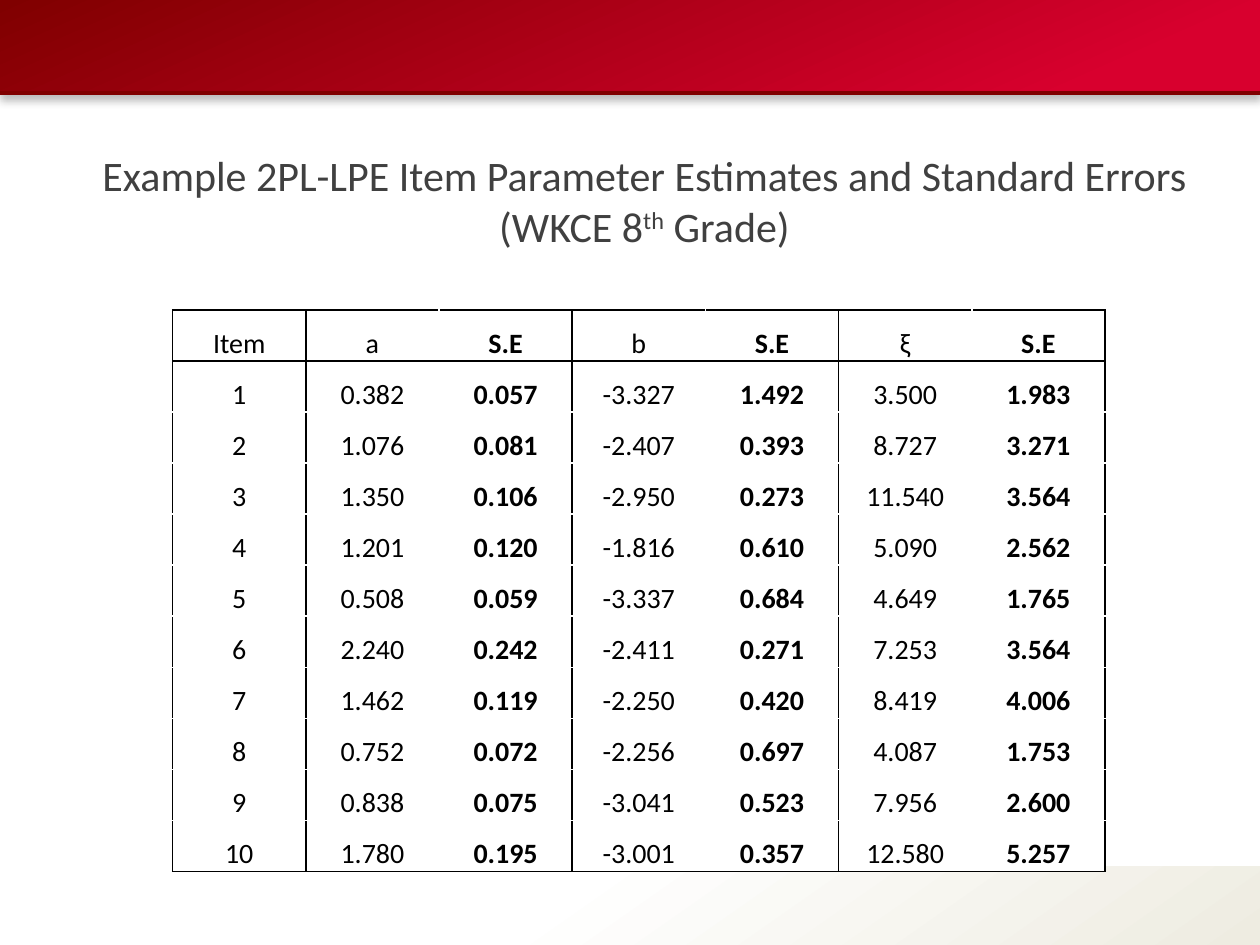
from lxml import etree
from pptx import Presentation
from pptx.dml.color import RGBColor
from pptx.enum.shapes import MSO_CONNECTOR, MSO_SHAPE
from pptx.enum.text import MSO_ANCHOR, MSO_AUTO_SIZE, PP_ALIGN
from pptx.oxml import parse_xml
from pptx.oxml.ns import nsdecls, qn
from pptx.util import Inches, Pt

RECTANGLE = MSO_SHAPE.RECTANGLE
STRAIGHT = MSO_CONNECTOR.STRAIGHT
TOP, BOTTOM = MSO_ANCHOR.TOP, MSO_ANCHOR.BOTTOM
CENTER = PP_ALIGN.CENTER
NO_AUTOFIT = MSO_AUTO_SIZE.NONE
TITLE_ONLY = 5

BLACK, WHITE, GRAY = "000000", "FFFFFF", "404040"
DARK_RED, RED, CREAM = "800000", "D8002E", "EEECE1"

HEADER = ["Item", "a", "S.E", "b", "S.E", "ξ", "S.E"]
ESTIMATES = [
    ["0.382", "0.057", "-3.327", "1.492", "3.500", "1.983"],
    ["1.076", "0.081", "-2.407", "0.393", "8.727", "3.271"],
    ["1.350", "0.106", "-2.950", "0.273", "11.540", "3.564"],
    ["1.201", "0.120", "-1.816", "0.610", "5.090", "2.562"],
    ["0.508", "0.059", "-3.337", "0.684", "4.649", "1.765"],
    ["2.240", "0.242", "-2.411", "0.271", "7.253", "3.564"],
    ["1.462", "0.119", "-2.250", "0.420", "8.419", "4.006"],
    ["0.752", "0.072", "-2.256", "0.697", "4.087", "1.753"],
    ["0.838", "0.075", "-3.041", "0.523", "7.956", "2.600"],
    ["1.780", "0.195", "-3.001", "0.357", "12.580", "5.257"],
]


def color(value):
    return RGBColor.from_string(value)


class SlideBuilder:
    """Style and current slide; lengths are percent of the slide's size."""

    font_name = "Calibri"

    def __init__(self, deck):
        self.deck = deck
        self.slide = deck.slides.add_slide(deck.slide_layouts[TITLE_ONLY])
        self.slide.background.fill.solid()
        self.slide.background.fill.fore_color.rgb = color(WHITE)

    def frame(self, left, top, width, height):
        across, down = self.deck.slide_width / 100, self.deck.slide_height / 100
        return (round(left * across), round(top * down),
                round(width * across), round(height * down))

    def style(self, font, size, hue, bold=False):
        font.name, font.size, font.bold = self.font_name, Pt(size), bold
        font.color.rgb = color(hue)

    def band(self, frame, stops, angle):
        box = self.slide.shapes.add_shape(RECTANGLE, *self.frame(*frame))
        box.shadow.inherit = False
        box.line.fill.background()
        box.fill.gradient()
        box.fill.gradient_angle = 360 - angle
        for stop, (position, hue) in zip(box.fill.gradient_stops, stops):
            stop.position, stop.color.rgb = position, color(hue)
        return box

    def drop_shadow(self, box):
        effects = box._element.spPr.find(qn("a:effectLst"))
        effects.append(parse_xml(
            f'<a:outerShdw {nsdecls("a")} blurRad="{Pt(5)}" dist="{Pt(3.8)}" '
            'dir="5400000" rotWithShape="0"><a:srgbClr val="000000">'
            '<a:alpha val="25000"/></a:srgbClr></a:outerShdw>'))

    def rule(self, left, top, width, hue, weight):
        x, y, length, _ = self.frame(left, top, width, 0)
        line = self.slide.shapes.add_connector(STRAIGHT, x, y, x + length, y)
        line.line.color.rgb, line.line.width = color(hue), Pt(weight)
        etree.SubElement(line._element.spPr, qn("a:effectLst"))

    def title(self, frame, parts, size, hue):
        box = self.slide.shapes.title
        box.left, box.top, box.width, box.height = self.frame(*frame)
        text = box.text_frame
        text.word_wrap, text.auto_size = True, NO_AUTOFIT
        text.vertical_anchor = TOP
        para = text.paragraphs[0]
        para.alignment = CENTER
        for words, raised in parts:
            span = para.add_run()
            span.text = words
            self.style(span.font, size, hue)
            if raised:
                span._r.get_or_add_rPr().set("baseline", "30000")

    def border(self, cell, side, hue):
        cell._tc.get_or_add_tcPr().append(parse_xml(
            f'<a:ln{side} {nsdecls("a")} w="{Pt(1)}"><a:solidFill>'
            f'<a:srgbClr val="{hue}"/></a:solidFill></a:ln{side}>'))

    def table(self, frame, rows, size):
        left, top, width, height = self.frame(*frame)
        row_count, column_count = len(rows), len(rows[0])
        table = self.slide.shapes.add_table(
            row_count, column_count, left, top, width, height).table
        table.first_row = table.horz_banding = False
        for column in table.columns:
            column.width = width // column_count
        for row in table.rows:
            row.height = height // row_count
        for r, values in enumerate(rows):
            for c, value in enumerate(values):
                # Each estimate and its standard error share one ruled box
                ruled = {"L": c == 0 or c % 2 == 1, "R": c % 2 == 0,
                         "T": r <= 1, "B": r in (0, row_count - 1)}
                cell = table.cell(r, c)
                for side, black in ruled.items():
                    self.border(cell, side, BLACK if black else WHITE)
                self.fill_cell(cell, value, size, bold=c > 0 and c % 2 == 0)

    def fill_cell(self, cell, value, size, bold):
        cell.fill.solid()
        cell.fill.fore_color.rgb = color(WHITE)
        cell.margin_left = cell.margin_right = cell.margin_top = Inches(0.01)
        cell.margin_bottom = 0
        cell.vertical_anchor = BOTTOM
        para = cell.text_frame.paragraphs[0]
        para.text = value
        para.alignment = CENTER
        self.style(para.runs[0].font, size, BLACK, bold)


def main():
    deck = Presentation()
    deck.slide_width, deck.slide_height = Inches(10), Inches(7.5)
    page = SlideBuilder(deck)

    # Footer and header bands
    page.band((0, 91.73, 100, 8.27), [(0.43, WHITE), (1, CREAM)], 55)
    header = page.band((0, 0, 100.1, 9.87), [(0, DARK_RED), (0.87, RED)], 66)
    page.drop_shadow(header)
    page.rule(0, 9.87, 100.1, DARK_RED, 2)

    # Title
    page.title((5.2, 15.2, 91.9, 14.53), [
        ("Example 2PL-LPE Item Parameter Estimates and Standard Errors (WKCE 8", False),
        ("th", True), (" Grade)", False)], 24, GRAY)

    # Parameter estimates, numbered by item
    items = [[str(number), *values] for number, values in enumerate(ESTIMATES, 1)]
    page.table((13.7, 32.8, 74, 59.47), [HEADER, *items], 16)

    deck.save("out.pptx")


if __name__ == "__main__":
    main()
